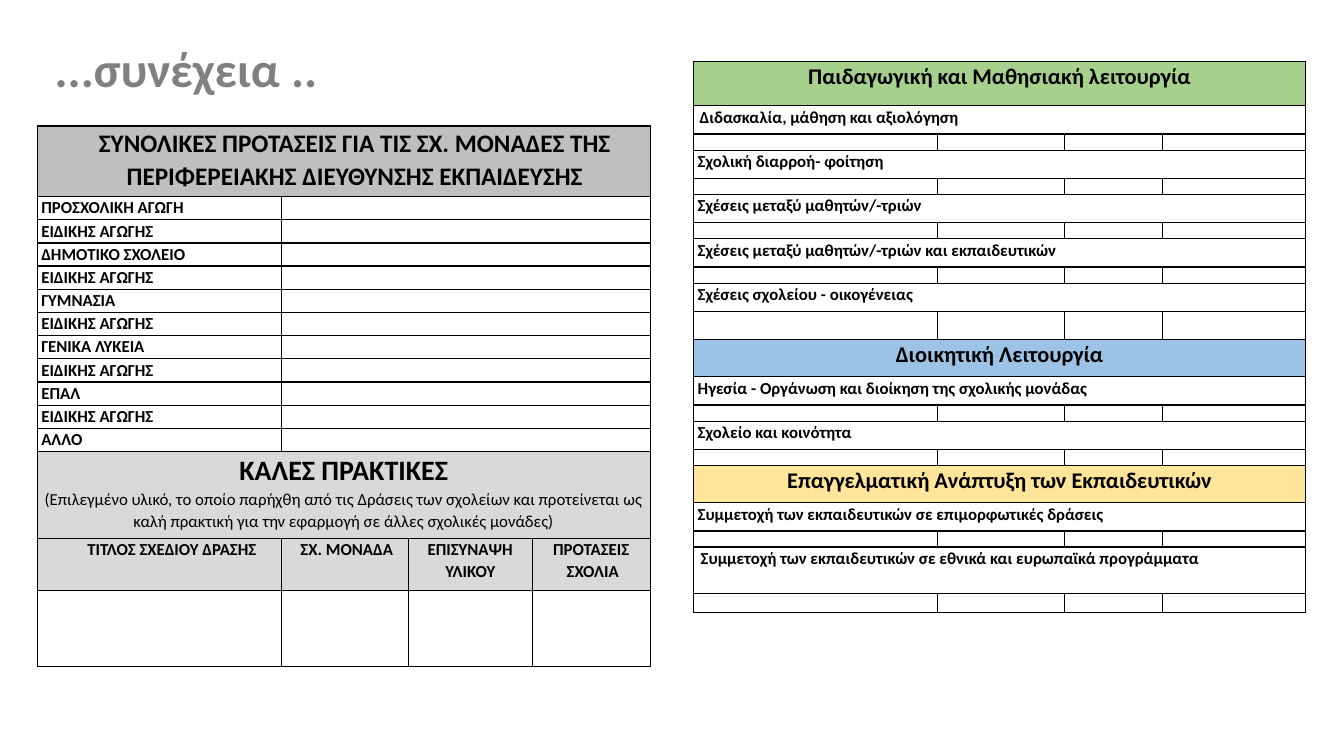
from lxml import etree
from pptx import Presentation
from pptx.dml.color import RGBColor
from pptx.enum.text import MSO_ANCHOR as Anchor, PP_ALIGN as Align
from pptx.oxml.ns import qn
from pptx.util import Inches, Pt

FONT = "Calibri"
COLORS = {
    "black": "000000", "title": "808080", "dark": "BFBFBF", "light": "D9D9D9",
    "green": "A8D08D", "blue": "9CC2E5", "yellow": "FFE599",
}

TITLE = "...συνέχεια .."

# Section: heading, fill, heading height, topics (text, height, blank row height, indents)
SECTIONS = [
    ("Παιδαγωγική και Μαθησιακή λειτουργία", "green", 0.44, [
        ("Διδασκαλία, μάθηση και αξιολόγηση", 0.28, 0.16, (0.25, -0.23)),
        ("Σχολική διαρροή- φοίτηση", 0.28, 0.16, (0, 0)),
        ("Σχέσεις μεταξύ μαθητών/-τριών", 0.28, 0.16, (0, 0)),
        ("Σχέσεις μεταξύ μαθητών/-τριών και εκπαιδευτικών", 0.28, 0.16, (0, 0)),
        ("Σχέσεις σχολείου - οικογένειας", 0.28, 0.28, (0, 0)),
    ]),
    ("Διοικητική Λειτουργία", "blue", 0.37, [
        ("Ηγεσία - Οργάνωση και διοίκηση της σχολικής μονάδας", 0.28, 0.16, (0, 0)),
        ("Σχολείο και κοινότητα", 0.28, 0.16, (0, 0)),
    ]),
    ("Επαγγελματική Ανάπτυξη των Εκπαιδευτικών", "yellow", 0.37, [
        ("Συμμετοχή των εκπαιδευτικών σε επιμορφωτικές δράσεις", 0.28, 0.16, (0, 0)),
        ("Συμμετοχή των εκπαιδευτικών σε εθνικά και ευρωπαϊκά προγράμματα",
         0.46, 0.19, (0.03, 0)),
    ]),
]

PROPOSALS = ("ΣΥΝΟΛΙΚΕΣ ΠΡΟΤΑΣΕΙΣ ΓΙΑ ΤΙΣ ΣΧ. ΜΟΝΑΔΕΣ ΤΗΣ "
             "ΠΕΡΙΦΕΡΕΙΑΚΗΣ ΔΙΕΥΘΥΝΣΗΣ ΕΚΠΑΙΔΕΥΣΗΣ")
SPECIAL = "ΕΙΔΙΚΗΣ ΑΓΩΓΗΣ"
SCHOOLS = ["ΠΡΟΣΧΟΛΙΚΗ ΑΓΩΓΗ", SPECIAL, "ΔΗΜΟΤΙΚΟ ΣΧΟΛΕΙΟ", SPECIAL, "ΓΥΜΝΑΣΙΑ", SPECIAL,
           "ΓΕΝΙΚΑ ΛΥΚΕΙΑ", SPECIAL, "ΕΠΑΛ", SPECIAL, "ΑΛΛΟ"]
PRACTICES = "ΚΑΛΕΣ ΠΡΑΚΤΙΚΕΣ"
PRACTICES_NOTE = ("(Επιλεγμένο υλικό, το οποίο παρήχθη από τις Δράσεις των σχολείων και "
                  "προτείνεται ως καλή πρακτική για την εφαρμογή σε άλλες σχολικές μονάδες)")
# Column heading, columns spanned, indents
PRACTICE_HEADS = [
    ("ΤΙΤΛΟΣ ΣΧΕΔΙΟΥ ΔΡΑΣΗΣ", 1, (0.25, 0)),
    ("ΣΧ. ΜΟΝΑΔΑ", 1, (0.25, -0.21)),
    ("ΕΠΙΣΥΝΑΨΗ ΥΛΙΚΟΥ", 2, (0, 0)),
    ("ΠΡΟΤΑΣΕΙΣ ΣΧΟΛΙΑ", 1, (0.03, -0.03)),
]


def write(p, text, size=12, bold=True, color="black", align=Align.LEFT,
          indents=(0, 0), spacing=1.07):
    p.alignment, p.line_spacing = align, spacing
    left, first = indents
    if left or first:
        ppr = p._p.get_or_add_pPr()
        ppr.set("marL", str(Inches(left)))
        ppr.set("indent", str(Inches(first)))
    if not text:
        etree.SubElement(p._p, qn("a:endParaRPr"), sz=str(size * 100))
        return
    r = p.add_run()
    r.text = text
    r.font.name, r.font.size, r.font.bold = FONT, Pt(size), bold
    r.font.color.rgb = RGBColor.from_string(COLORS[color])


def entry(text="", span=1, fill=None, **fmt):
    """One table cell: a list of (text, format) paragraphs, its span and its fill."""
    return [(text, fmt)], span, fill


def blanks(*spans):
    return [entry(span=span, size=8) for span in spans]


def add_borders(cell):
    tcpr = cell._tc.get_or_add_tcPr()
    for side in ("lnL", "lnR", "lnT", "lnB"):
        ln = etree.SubElement(tcpr, qn("a:" + side), w=str(Pt(1)))
        solid = etree.SubElement(ln, qn("a:solidFill"))
        etree.SubElement(solid, qn("a:srgbClr"), val=COLORS["black"])


def add_grid(slide, left, top, widths, rows):
    """Draw a table from (height, cells) rows."""
    frame = slide.shapes.add_table(
        len(rows), len(widths), Inches(left), Inches(top),
        Inches(sum(widths)), Inches(sum(height for height, _ in rows)))
    table = frame.table
    table.first_row = table.horz_banding = False
    for column, width in zip(table.columns, widths):
        column.width = Inches(width)
    for cell in table.iter_cells():
        add_borders(cell)
        cell.fill.background()
        cell.margin_left = cell.margin_right = Inches(0.04)
        cell.margin_top = cell.margin_bottom = 0
    for i, (height, cells) in enumerate(rows):
        table.rows[i].height = Inches(height)
        col = 0
        for paragraphs, span, fill in cells:
            cell = table.cell(i, col)
            if span > 1:
                cell.merge(table.cell(i, col + span - 1))
            if fill:
                cell.fill.solid()
                cell.fill.fore_color.rgb = RGBColor.from_string(COLORS[fill])
            tf = cell.text_frame
            for n, (text, fmt) in enumerate(paragraphs):
                write(tf.add_paragraph() if n else tf.paragraphs[0], text, **fmt)
            col += span


def function_rows():
    rows = []
    for heading, fill, height, topics in SECTIONS:
        rows.append((height, [entry(heading, 4, fill, size=16, align=Align.CENTER)]))
        for text, topic_height, blank_height, indents in topics:
            rows.append((topic_height, [entry(text, 4, indents=indents)]))
            rows.append((blank_height, blanks(1, 1, 1, 1)))
    return rows


def proposal_rows():
    center = {"align": Align.CENTER}
    rows = [(0.7, [entry(PROPOSALS, 5, "dark", size=18, indents=(0.22, 0), **center)])]
    rows += [(0.23, [entry(school)] + blanks(4)) for school in SCHOOLS]
    practices = [(PRACTICES, {"size": 20, **center}),
                 (PRACTICES_NOTE, {"bold": False, **center})]
    rows.append((0.86, [(practices, 5, "light")]))
    rows.append((0.52, [entry(text, span, "light", indents=indents, **center)
                        for text, span, indents in PRACTICE_HEADS]))
    rows.append((0.75, blanks(*[span for _, span, _ in PRACTICE_HEADS])))
    return rows


def main():
    prs = Presentation()
    prs.slide_width, prs.slide_height = Inches(13.33), Inches(7.5)
    slide = prs.slides.add_slide(prs.slide_layouts[6])

    add_grid(slide, 6.88, 0.61, [2.42, 1.26, 0.97, 1.42], function_rows())
    add_grid(slide, 0.37, 1.25, [2.42, 1.26, 0.97, 0.26, 1.17], proposal_rows())

    title = slide.shapes.add_textbox(Inches(0.35), Inches(0.14), Inches(2.99), Inches(1.15))
    tf = title.text_frame
    tf.word_wrap, tf.vertical_anchor = True, Anchor.MIDDLE
    write(tf.paragraphs[0], TITLE, size=35, color="title", align=Align.CENTER, spacing=0.9)

    prs.save("out.pptx")


if __name__ == "__main__":
    main()
